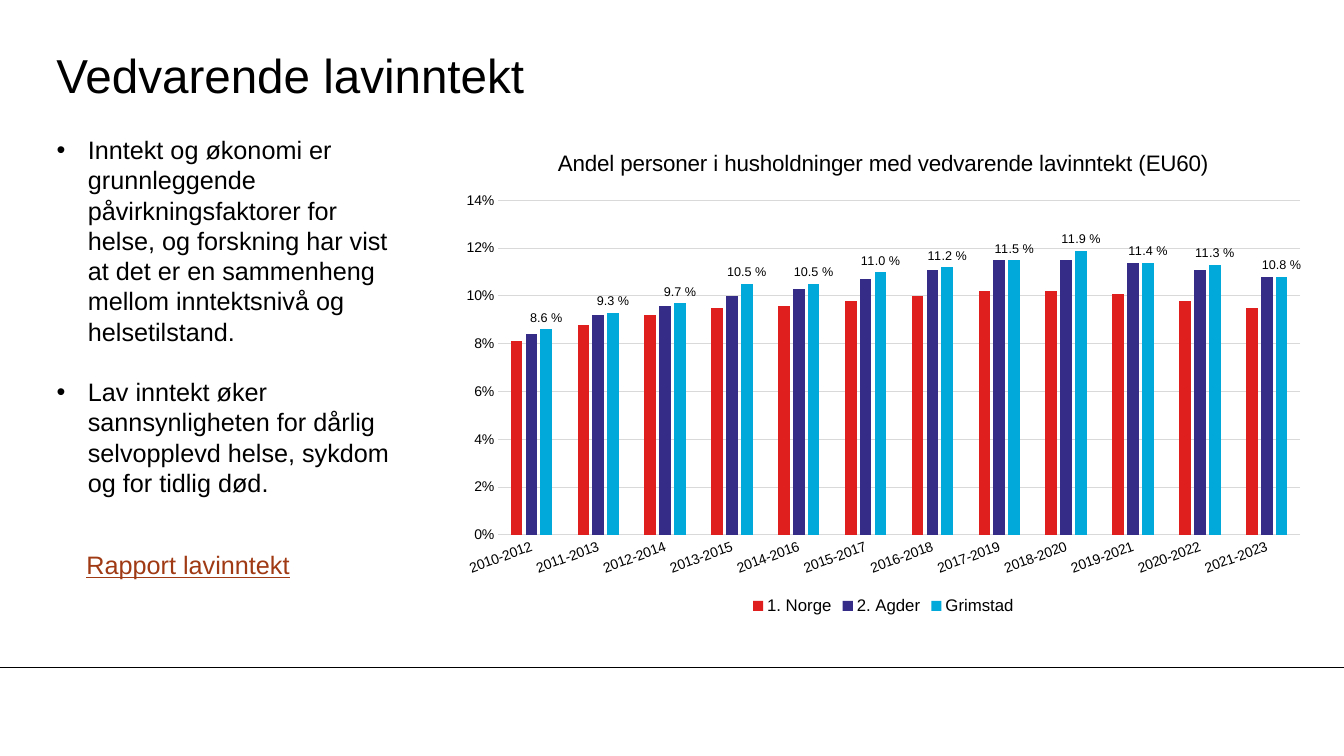
from lxml import etree
from pptx import Presentation
from pptx import util as u
from pptx.chart.data import CategoryChartData
from pptx.dml.color import RGBColor
from pptx.enum import chart as ch, shapes, text
from pptx.oxml.ns import qn

FONT = "Arial"
COLORS = {
    "text": "000000",
    "link": "9F3A14",
    "grid": "D9D9D9",
    "1. Norge": "DF1F1D",
    "2. Agder": "342C86",
    "Grimstad": "00A9DA",
}
WIDTH, HEIGHT = u.Inches(13.33), u.Inches(7.5)

BULLETS = [
    "Inntekt og økonomi er grunnleggende påvirkningsfaktorer for helse, og forskning "
    "har vist at det er en sammenheng mellom inntektsnivå og helsetilstand.",
    "Lav inntekt øker sannsynligheten for dårlig selvopplevd helse, sykdom "
    "og for tidlig død.",
]
PERIODS = [f"{year}-{year + 2}" for year in range(2010, 2022)]
SHARES = {
    "1. Norge": [0.081, 0.088, 0.092, 0.095, 0.096, 0.098,
                 0.1, 0.102, 0.102, 0.101, 0.098, 0.095],
    "2. Agder": [0.084, 0.092, 0.096, 0.1, 0.103, 0.107,
                 0.111, 0.115, 0.115, 0.114, 0.111, 0.108],
    "Grimstad": [0.086, 0.093, 0.097, 0.105, 0.105, 0.11,
                 0.112, 0.115, 0.119, 0.114, 0.113, 0.108],
}


def area(left, top, width, height):
    """Turn percentages of the slide's size into lengths."""
    return (int(WIDTH * left / 100), int(HEIGHT * top / 100),
            int(WIDTH * width / 100), int(HEIGHT * height / 100))


def color(name):
    return RGBColor.from_string(COLORS[name])


def style_font(font, size, name="text"):
    font.name = FONT
    font.size = u.Pt(size)
    font.bold = False
    font.color.rgb = color(name)


def style_line(line, name):
    line.color.rgb = color(name)
    line.width = u.Pt(0.75)


def add_title(slide, words):
    title = slide.shapes.title
    title.left, title.top, title.width, title.height = area(4.2, 4.8, 83.27, 10)
    frame = title.text_frame
    frame.text = words
    frame.margin_left = frame.margin_right = frame.margin_top = frame.margin_bottom = 0
    frame.vertical_anchor = text.MSO_ANCHOR.MIDDLE
    paragraph = frame.paragraphs[0]
    paragraph.alignment = text.PP_ALIGN.LEFT
    style_font(paragraph.font, 34)


def add_text_box(slide, place):
    frame = slide.shapes.add_textbox(*area(*place)).text_frame
    frame.word_wrap = True
    return frame


def add_bullet(paragraph):
    indent = u.Inches(0.31)
    properties = paragraph._p.get_or_add_pPr()
    properties.set("marL", str(indent))
    properties.set("indent", str(-indent))
    etree.SubElement(properties, qn("a:buFont")).set("typeface", FONT)
    etree.SubElement(properties, qn("a:buChar")).set("char", "•")


def add_bullets(slide, items, place):
    frame = add_text_box(slide, place)
    for index, item in enumerate(items):
        paragraph = frame.add_paragraph() if index else frame.paragraphs[0]
        paragraph.text = item
        add_bullet(paragraph)
        if index:
            paragraph.space_before = u.Pt(21.6)
        style_font(paragraph.font, 18)


def add_link_text(slide, words, place):
    paragraph = add_text_box(slide, place).paragraphs[0]
    paragraph.text = words
    style_font(paragraph.font, 18, "link")
    paragraph.font.underline = True


def add_rule(slide, row):
    left, top, width, _ = area(0, row, 100, 0)
    rule = slide.shapes.add_connector(
        shapes.MSO_CONNECTOR.STRAIGHT, left, top, left + width, top)
    style_line(rule.line, "text")
    etree.SubElement(rule._element.spPr, qn("a:effectLst"))


def tilt_labels(axis, degrees):
    body = axis._element.find(qn("c:txPr")).find(qn("a:bodyPr"))
    body.set("rot", str(degrees * 60000))
    body.set("vert", "horz")


def style_axes(chart):
    periods, shares = chart.category_axis, chart.value_axis
    for axis in (periods, shares):
        axis.major_tick_mark = axis.minor_tick_mark = ch.XL_TICK_MARK.NONE
        style_font(axis.tick_labels.font, 10)
    tilt_labels(periods, -20)
    style_line(periods.format.line, "grid")
    shares.format.line.fill.background()
    shares.minimum_scale, shares.maximum_scale, shares.major_unit = 0, 0.14, 0.02
    shares.has_major_gridlines = True
    style_line(shares.major_gridlines.format.line, "grid")
    shares.tick_labels.number_format = "0%"
    shares.tick_labels.number_format_is_linked = False


def label_columns(series):
    labels = series.data_labels
    labels.show_value = True
    labels.number_format = r"0.0\ %"
    labels.number_format_is_linked = False
    labels.position = ch.XL_LABEL_POSITION.OUTSIDE_END
    style_font(labels.font, 9)


def add_column_chart(slide, heading, place):
    data = CategoryChartData(number_format="0.0%")
    data.categories = PERIODS
    for name, values in SHARES.items():
        data.add_series(name, values)
    chart = slide.shapes.add_chart(
        ch.XL_CHART_TYPE.COLUMN_CLUSTERED, *area(*place), data).chart
    style_font(chart.font, 10)

    title = chart.chart_title.text_frame
    title.text = heading
    style_font(title.paragraphs[0].font, 16)
    chart.has_legend = True
    chart.legend.position = ch.XL_LEGEND_POSITION.BOTTOM
    chart.legend.include_in_layout = False
    style_font(chart.legend.font, 12)
    style_axes(chart)

    plot = chart.plots[0]
    plot.gap_width, plot.overlap = 219, -27
    plot.vary_by_categories = False
    for series in plot.series:
        series.format.fill.solid()
        series.format.fill.fore_color.rgb = color(series.name)
        series.invert_if_negative = False
    label_columns(plot.series[-1])


def main():
    presentation = Presentation()
    presentation.slide_width, presentation.slide_height = WIDTH, HEIGHT
    slide = presentation.slides.add_slide(
        presentation.slide_layouts.get_by_name("Title Only"))
    add_rule(slide, 88.27)
    add_title(slide, "Vedvarende lavinntekt")
    add_bullets(slide, BULLETS, (3.48, 17.13, 26.25, 49.87))
    add_link_text(slide, "Rapport lavinntekt", (5.7, 72, 19.9, 5.35))
    add_column_chart(
        slide, "Andel personer i husholdninger med vedvarende lavinntekt (EU60)",
        (33.43, 17.2, 64.6, 64.67))
    presentation.save("out.pptx")


if __name__ == "__main__":
    main()
